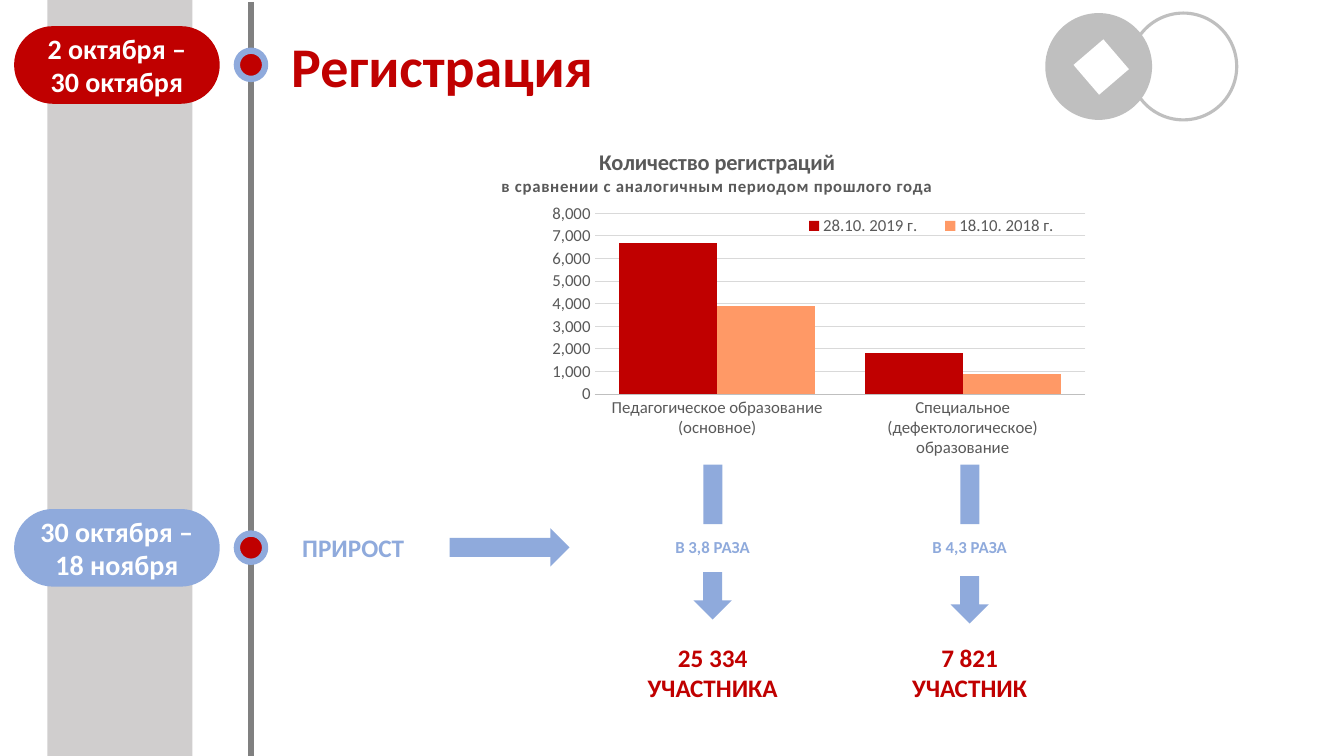
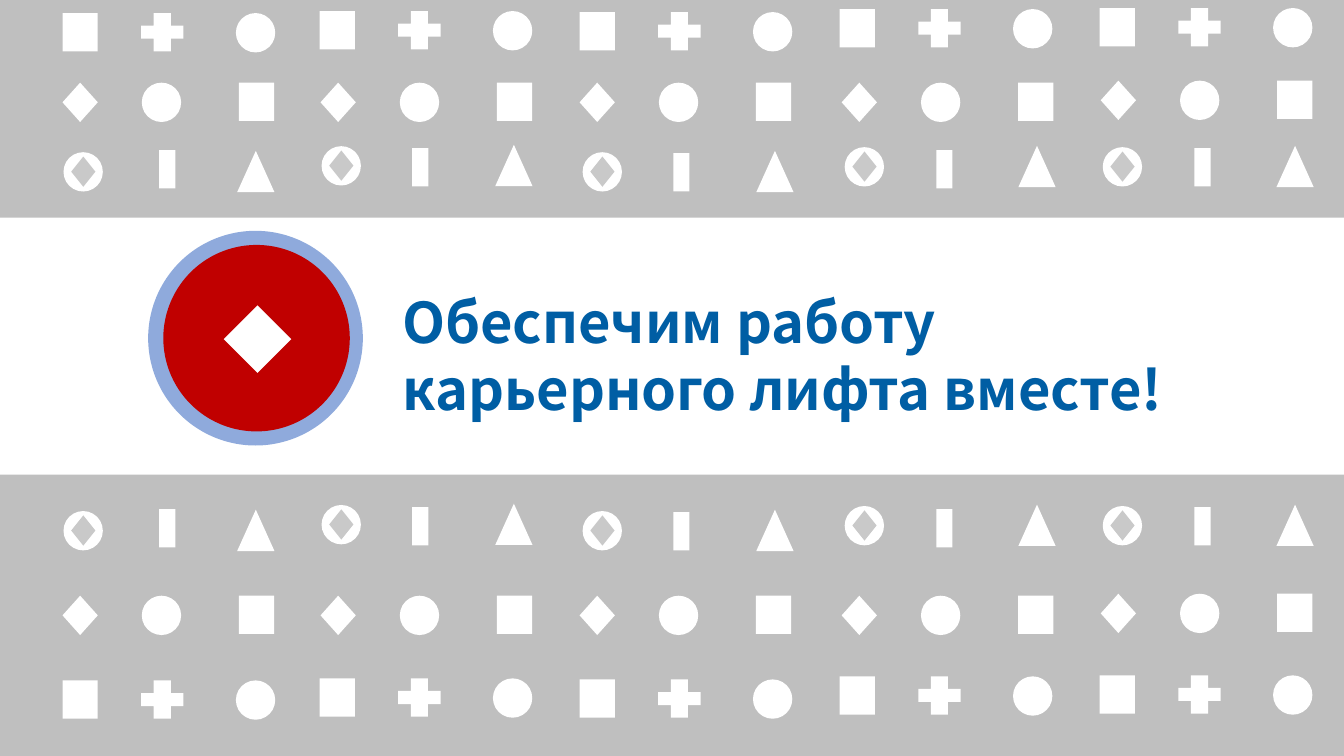
from lxml.etree import SubElement
from pptx import Presentation
from pptx.chart.data import CategoryChartData
from pptx.dml.color import RGBColor
from pptx.enum.chart import XL_CHART_TYPE, XL_LEGEND_POSITION, XL_TICK_MARK
from pptx.enum.shapes import MSO_CONNECTOR, MSO_SHAPE as SHAPE
from pptx.enum.text import MSO_ANCHOR, PP_ALIGN
from pptx.oxml import parse_xml
from pptx.oxml.ns import nsdecls, qn
from pptx.util import Inches, Pt

# Grid of square cells: 40 columns by 22.5 rows
CELL = Inches(1) // 3
COLS, ROWS = 40, 22.5
COLORS = {
    name: RGBColor.from_string(code)
    for name, code in {
        "red": "C00000", "blue": "8FAADC", "orange": "FF9966",
        "navy": "005EA4", "white": "FFFFFF", "band": "D0CECE",
        "gray": "BFBFBF", "pale": "C9C9C9", "axis": "808080",
        "text": "595959", "grid": "D9D9D9",
    }.items()
}
FONT = "Calibri"


def add(s, kind, x, y, w, h, fill=None, line=None, width=4.5):
    """Place a preset shape, or a text box when kind is None, by grid cells."""
    box = [int(v * CELL) for v in (x, y, w, h)]
    if kind is None:
        sp = s.shapes.add_textbox(*box)
        sp.text_frame.word_wrap = True
        return sp
    sp = s.shapes.add_shape(kind, *box)
    sp.shadow.inherit = False
    sp.fill.solid()
    sp.fill.fore_color.rgb = COLORS[fill]
    if line:
        sp.line.color.rgb = COLORS[line]
        sp.line.width = Pt(width)
    else:
        sp.line.fill.background()
    return sp


def write(sp, text, size, color, align=PP_ALIGN.CENTER, font=FONT):
    """Fill a shape with bold text, one paragraph a line."""
    tf = sp.text_frame
    tf.text = text
    for p in tf.paragraphs:
        p.alignment = align
        p.font.name = font
        p.font.size = Pt(size)
        p.font.bold = True
        p.font.color.rgb = COLORS[color]
    return tf


prs = Presentation()
prs.slide_width = COLS * CELL
prs.slide_height = int(ROWS * CELL)
blank = prs.slide_layouts[6]

# ---- Slide 1: registration ----
s = prs.slides.add_slide(blank)

# Timeline band and axis
add(s, SHAPE.RECTANGLE, 1.41, 0, 4.32, ROWS, "band")
axis_x = int(7.47 * CELL)
axis = s.shapes.add_connector(
    MSO_CONNECTOR.STRAIGHT, axis_x, int(0.06 * CELL), axis_x, prs.slide_height)
axis.line.color.rgb = COLORS["axis"]
axis.line.width = Pt(4.5)
SubElement(axis._element.spPr, qn("a:effectLst"))

# Dates with their marks on the axis
for y, fill, dates in [(0.78, "red", "2 октября – 30 октября"),
                       (15.15, "blue", "30 октября –\n18 ноября")]:
    pill = add(s, SHAPE.ROUNDED_RECTANGLE, 0.42, y, 6.12, 2.31, fill)
    pill.adjustments[0] = 0.5
    tf = write(pill, dates, 20, "white")
    tf.vertical_anchor = MSO_ANCHOR.MIDDLE
    tf.word_wrap = True
    add(s, SHAPE.OVAL, 7.05, y + 0.73, 0.84, 0.84, "red", "blue")

# Title
write(add(s, None, 8.37, 0.78, 12.42, 2.31), "Регистрация", 40, "red", PP_ALIGN.LEFT)

# Corner ornament
add(s, SHAPE.OVAL, 33.63, 0.39, 3.18, 3.18, "white", "gray", 2.25)
add(s, SHAPE.OVAL, 31.11, 0.39, 3.18, 3.18, "gray")
add(s, SHAPE.RECTANGLE, 32.19, 1.41, 1.17, 1.17, "white").rotation = 49.4

# Chart of registrations
data = CategoryChartData(number_format="#,##0")
data.categories = ["Педагогическое образование (основное)",
                   "Специальное (дефектологическое) образование"]
data.add_series("28.10. 2019 г.", (6700, 1800))
data.add_series("18.10. 2018 г.", (3900, 900))
chart = s.shapes.add_chart(
    XL_CHART_TYPE.COLUMN_CLUSTERED,
    *[int(v * CELL) for v in (9.96, 3.87, 28.65, 10.77)], data).chart
chart.font.name = FONT
chart.font.size = Pt(12)
chart.font.color.rgb = COLORS["text"]

plot = chart.plots[0]
plot.gap_width = 50
plot.overlap = 0
plot.vary_by_categories = False
for series, color in zip(plot.series, ("red", "orange")):
    series.format.fill.solid()
    series.format.fill.fore_color.rgb = COLORS[color]

cat, val = chart.category_axis, chart.value_axis
for ax in (cat, val):
    ax.major_tick_mark = ax.minor_tick_mark = XL_TICK_MARK.NONE
cat.format.line.color.rgb = COLORS["gray"]
cat.format.line.width = Pt(0.75)
val.format.line.fill.background()
val.minimum_scale, val.maximum_scale, val.major_unit = 0, 8000, 1000
val.tick_labels.number_format = "#,##0"
val.tick_labels.number_format_is_linked = False
val.major_gridlines.format.line.color.rgb = COLORS["grid"]
val.major_gridlines.format.line.width = Pt(0.75)

chart.has_legend = True
chart.legend.position = XL_LEGEND_POSITION.BOTTOM
chart.legend.include_in_layout = False

chart.has_title = True
tf = chart.chart_title.text_frame
tf.text = "Количество регистраций\nв сравнении с аналогичным периодом прошлого года"
for p, size, spacing in zip(tf.paragraphs, (16, 12), ("0", "50")):
    p.alignment = PP_ALIGN.CENTER
    r = p.runs[0]
    r.font.name = FONT
    r.font.size = Pt(size)
    r.font.bold = True
    r.font.color.rgb = COLORS["text"]
    r._r.get_or_add_rPr().set("spc", spacing)

# Manual places of title, legend and plot as shares of the chart
for part, index, inner, place in [
    (chart.chart_title._element, 1, False, {"x": 0.17, "y": 0.04}),
    (chart.legend._element, 1, False, {"x": 0.47, "y": 0.23, "w": 0.3, "h": 0.07}),
    (plot._element.getparent(), 0, True, {"x": 0.27, "y": 0.23, "w": 0.51, "h": 0.5}),
]:
    for old in part.findall(qn("c:layout")):
        part.remove(old)
    layout = parse_xml(f"<c:layout {nsdecls('c')}><c:manualLayout/></c:layout>")
    manual = layout[0]
    if inner:
        SubElement(manual, qn("c:layoutTarget")).set("val", "inner")
    for side in ("x", "y"):
        SubElement(manual, qn(f"c:{side}Mode")).set("val", "edge")
    for key, share in place.items():
        SubElement(manual, qn(f"c:{key}")).set("val", str(share))
    part.insert(index, layout)

# Growth row
growth = add(s, None, 8.7, 15.69, 3.84, 1.2)
write(growth, "ПРИРОСТ", 18, "blue", PP_ALIGN.LEFT).word_wrap = False
add(s, SHAPE.RIGHT_ARROW, 13.38, 15.72, 3.57, 1.14, "blue")

# Growth and total under each chart category
for x, arrow_y, ratio, total in [
    (18.15, 17.03, "В 3,8 РАЗА", "25 334 УЧАСТНИКА"),
    (25.8, 17.15, "В 4,3 РАЗА", "7 821\nУЧАСТНИК"),
]:
    center = x + 6.12 / 2
    add(s, SHAPE.RECTANGLE, center - 0.28, 13.83, 0.57, 1.77, "blue")
    write(add(s, None, x, 15.84, 6.12, 0.9), ratio, 12, "blue")
    add(s, SHAPE.DOWN_ARROW, center - 0.57, arrow_y, 1.14, 1.41, "blue")
    write(add(s, None, x, 18.96, 6.12, 2.13), total, 18, "red")

# ---- Slide 2: closing ----
s = prs.slides.add_slide(blank)
s.background.fill.solid()
s.background.fill.fore_color.rgb = COLORS["gray"]

# Pattern rows: drop to the lower copy, lefts and tops of the five groups,
# then the group's figures as (kind, dx, dy, width, height, fill)
pattern = [
    (19.86, (1.86, 9.51, 17.25, 24.99, 32.73), (0.39, 0.33, 0.36, 0.27, 0.24), [
        (SHAPE.RECTANGLE, 0, 0, 1.05, 1.14, "white"),
        (SHAPE.CROSS, 2.34, 0, 1.26, 1.14, "white"),
        (SHAPE.OVAL, 5.16, 0, 1.17, 1.17, "white")]),
    (15.27, (1.86, 9.54, 17.25, 25.05, 32.76), (2.46, 2.46, 2.46, 2.46, 2.4), [
        (SHAPE.DIAMOND, 0, 0, 1.05, 1.17, "white"),
        (SHAPE.OVAL, 2.36, 0, 1.17, 1.17, "white"),
        (SHAPE.RECTANGLE, 5.25, 0, 1.05, 1.14, "white")]),
    (10.68, (1.89, 9.57, 17.34, 25.14, 32.82), (4.53, 4.35, 4.53, 4.38, 4.38), [
        (SHAPE.OVAL, 0, 0, 1.17, 1.17, "white"),
        (SHAPE.DIAMOND, 0.23, 0.13, 0.72, 0.9, "pale"),
        (SHAPE.ISOSCELES_TRIANGLE, 5.17, -0.04, 1.11, 1.23, "white")]),
    (10.68, (4.74, 12.27, 20.04, 27.87, 35.55), (4.47, 4.41, 4.56, 4.47, 4.41), [
        (SHAPE.RECTANGLE, 0, 0, 0.48, 1.14, "white")]),
]
for drop, lefts, tops, figures in pattern:
    for shift in (0, drop):
        for x, y in zip(lefts, tops):
            for kind, dx, dy, w, h, fill in figures:
                sp = add(s, kind, x + dx, y + shift + dy, w, h, fill)
                if kind == SHAPE.CROSS:
                    sp.adjustments[0] = 0.33

# Middle band with emblem and message
add(s, SHAPE.RECTANGLE, 0, 6.48, COLS, 7.65, "white")
add(s, SHAPE.OVAL, 4.41, 6.87, 6.39, 6.39, "blue")
add(s, SHAPE.OVAL, 4.86, 7.29, 5.55, 5.55, "red")
add(s, SHAPE.DIAMOND, 6.66, 9.09, 2.01, 2.01, "white")
message = add(s, None, 11.67, 8.4, 27.9, 4.35)
tf = write(message, "Обеспечим работу\nкарьерного лифта вместе!", 40, "navy",
           PP_ALIGN.LEFT, "Noto Sans CJK TC")
for p in tf.paragraphs:
    p.line_spacing = Pt(48)

prs.save("out.pptx")
